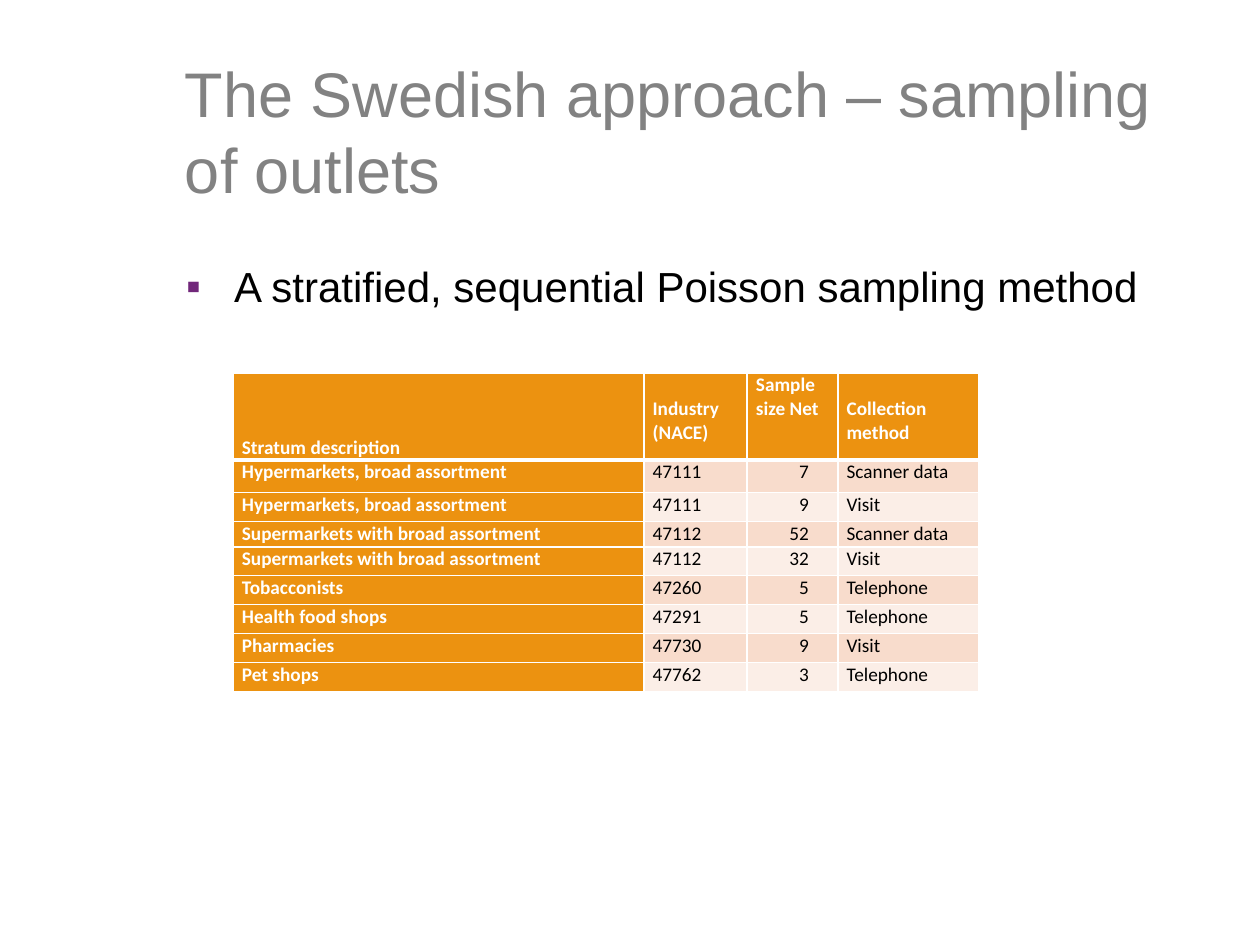
from lxml.etree import SubElement
from pptx import Presentation
from pptx.dml.color import RGBColor
from pptx.enum.text import MSO_ANCHOR, PP_ALIGN
from pptx.oxml import parse_xml
from pptx.oxml.ns import nsdecls, qn
from pptx.util import Inches, Pt

WHITE = RGBColor(0xFF, 0xFF, 0xFF)
BLACK = RGBColor(0, 0, 0)
GREY = RGBColor(0x82, 0x82, 0x82)
PURPLE = RGBColor(0x71, 0x27, 0x7A)
ORANGE = RGBColor(0xEC, 0x92, 0x10)
BANDS = RGBColor(0xF8, 0xDC, 0xCC), RGBColor(0xFB, 0xEE, 0xE7)

HEADER = ["Stratum description", "Industry (NACE)", "Sample size Net", "Collection method"]
STRATA = [
    ["Hypermarkets, broad assortment", "47111", "7", "Scanner data"],
    ["Hypermarkets, broad assortment", "47111", "9", "Visit"],
    ["Supermarkets with broad assortment", "47112", "52", "Scanner data"],
    ["Supermarkets with broad assortment", "47112", "32", "Visit"],
    ["Tobacconists", "47260", "5", "Telephone"],
    ["Health food shops", "47291", "5", "Telephone"],
    ["Pharmacies", "47730", "9", "Visit"],
    ["Pet shops", "47762", "3", "Telephone"],
]
COLUMN_WIDTHS = [3.26, 0.82, 0.72, 1.12]
ROW_HEIGHTS = [0.69, 0.26, 0.23, 0.2] + [0.23] * 5
SIZE_COLUMN = 2
HEADER_LINE = 0.19


def add_text(page, left, top, width, height, text, size, color):
    box = page.shapes.add_textbox(Inches(left), Inches(top), Inches(width), Inches(height))
    box.text_frame.word_wrap = True
    para = box.text_frame.paragraphs[0]
    para.text = text
    return box, para, size, color


def set_borders(cell, bottom_width):
    """Draw white lines of one point round a cell, with its own bottom width."""
    properties = cell._tc.get_or_add_tcPr()
    widths = {"lnL": 1, "lnR": 1, "lnT": 1, "lnB": bottom_width}
    for place, (side, width) in enumerate(widths.items()):
        properties.insert(place, parse_xml(
            f'<a:{side} {nsdecls("a")} w="{Pt(width)}"><a:solidFill>'
            f'<a:srgbClr val="{WHITE}"/></a:solidFill></a:{side}>'))


deck = Presentation()
deck.slide_width, deck.slide_height = Inches(10), Inches(7.5)
page = deck.slides.add_slide(deck.slide_layouts[6])

title = add_text(page, 1.37, 0.41, 8.13, 1.25,
                 "The Swedish approach – sampling of outlets", 36, GREY)
title[0].text_frame.vertical_anchor = MSO_ANCHOR.MIDDLE
body = add_text(page, 1.38, 2.02, 8.13, 4.95,
                "A stratified, sequential Poisson sampling method", 24, BLACK)

bullet = body[1]._p.get_or_add_pPr()
bullet.set("marL", str(Inches(0.38)))
bullet.set("indent", str(-Inches(0.38)))
SubElement(SubElement(bullet, qn("a:buClr")), qn("a:srgbClr"), val=str(PURPLE))
SubElement(bullet, qn("a:buFont"), typeface="Arial")
SubElement(bullet, qn("a:buChar"), char="▪")

for box, para, size, color in (title, body):
    para.font.name = "Arial"
    para.font.size = Pt(size)
    para.font.color.rgb = color

table = page.shapes.add_table(
    len(ROW_HEIGHTS), len(COLUMN_WIDTHS), Inches(1.85), Inches(2.96),
    Inches(sum(COLUMN_WIDTHS)), Inches(sum(ROW_HEIGHTS))).table
for column, width in zip(table.columns, COLUMN_WIDTHS):
    column.width = Inches(width)
for row, height in zip(table.rows, ROW_HEIGHTS):
    row.height = Inches(height)

for r, texts in enumerate([HEADER] + STRATA):
    for c, text in enumerate(texts):
        cell = table.cell(r, c)
        is_heading = r == 0 or c == 0
        cell.text = text
        cell.margin_left = cell.margin_right = Inches(0.07)
        cell.margin_top = cell.margin_bottom = 0
        cell.fill.solid()
        cell.fill.fore_color.rgb = ORANGE if is_heading else BANDS[(r - 1) % 2]
        set_borders(cell, 3 if r == 0 else 1)

        para = cell.text_frame.paragraphs[0]
        para.font.name = "Calibri"
        para.font.size = Pt(11)
        para.font.bold = is_heading
        para.font.color.rgb = WHITE if is_heading else BLACK
        if r > 0 and c == SIZE_COLUMN:
            para.alignment = PP_ALIGN.RIGHT
            cell.margin_right = Inches(0.23)

table.cell(0, 0).vertical_anchor = MSO_ANCHOR.BOTTOM
for c in (1, 3):
    table.cell(0, c).margin_top = Inches(HEADER_LINE)

deck.save("out.pptx")
